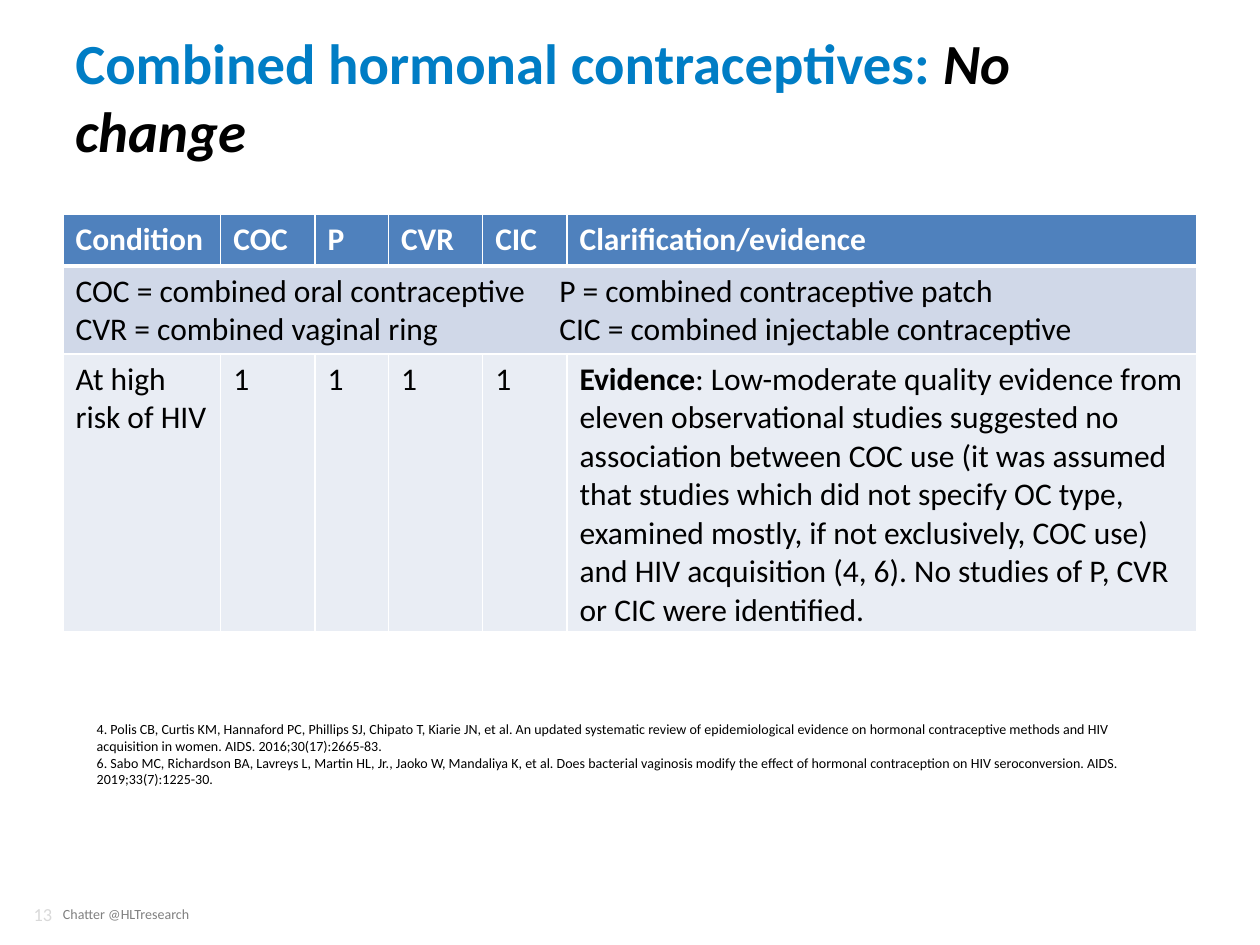
from lxml.etree import SubElement as Sub
from pptx import Presentation
from pptx.dml.color import RGBColor
from pptx.enum.text import MSO_ANCHOR as Anchor, PP_ALIGN as Align
from pptx.oxml.ns import qn
from pptx.util import Cm, Pt

BLACK, WHITE, BLUE = "000000", "FFFFFF", "007DC5"
HEAD, BAND, PALE = "4F81BD", "D0D8E8", "E9EDF4"

HEADS = ["Condition", "COC", "P", "CVR", "CIC", "Clarification/evidence"]
KEYS = [
    "COC = combined oral contraceptive\tP = combined contraceptive patch",
    "CVR = combined vaginal ring\tCIC = combined injectable contraceptive",
]
EVIDENCE = (
    ": Low-moderate quality evidence from eleven observational studies "
    "suggested no association between COC use (it was assumed that studies "
    "which did not specify OC type, examined mostly, if not exclusively, COC "
    "use) and HIV acquisition (4, 6). No studies of P, CVR or CIC were identified."
)
REFS = [
    "4. Polis CB, Curtis KM, Hannaford PC, Phillips SJ, Chipato T, Kiarie JN, "
    "et al. An updated systematic review of epidemiological evidence on "
    "hormonal contraceptive methods and HIV acquisition in women. AIDS. "
    "2016;30(17):2665-83.",
    "6. Sabo MC, Richardson BA, Lavreys L, Martin HL, Jr., Jaoko W, Mandaliya K, "
    "et al. Does bacterial vaginosis modify the effect of hormonal contraception "
    "on HIV seroconversion. AIDS. 2019;33(7):1225-30.",
]


def color(code):
    return RGBColor.from_string(code)


def add_run(para, text, size, code=BLACK, bold=False, italic=False):
    run = para.add_run()
    run.text = text
    font = run.font
    font.name, font.size = "Calibri", Pt(size)
    font.bold, font.italic = bold, italic
    font.color.rgb = color(code)


def paras(frame, count):
    """Return the frame's first paragraph and as many new ones as needed."""
    return [frame.paragraphs[0]] + [frame.add_paragraph() for _ in range(count - 1)]


def add_box(slide, left, top, width, height, anchor=Anchor.TOP):
    box = slide.shapes.add_textbox(Cm(left), Cm(top), Cm(width), Cm(height))
    frame = box.text_frame
    frame.word_wrap = True
    frame.vertical_anchor = anchor
    return frame


def add_title(slide, left, top, width, height):
    para = add_box(slide, left, top, width, height, Anchor.MIDDLE).paragraphs[0]
    add_run(para, "Combined hormonal contraceptives: ", 32.4, BLUE, bold=True)
    add_run(para, "No change", 32.4, bold=True, italic=True)


def style_cell(cell, fill, base=1):
    """Give the cell white borders, with its own bottom width, and a fill."""
    props = cell._tc.get_or_add_tcPr()
    for side in "LRTB":
        width = base if side == "B" else 1
        line = Sub(props, qn(f"a:ln{side}"), w=str(Pt(width)))
        Sub(Sub(line, qn("a:solidFill")), qn("a:srgbClr"), val=WHITE)
    cell.fill.solid()
    cell.fill.fore_color.rgb = color(fill)


def add_tab(para, pos):
    tabs = Sub(para._p.get_or_add_pPr(), qn("a:tabLst"))
    Sub(tabs, qn("a:tab"), pos=str(Cm(pos)), algn="l")


def add_grid(slide, left, top, width, height):
    cols = [3.18, 1.9, 1.48, 1.9, 1.7]
    rows = [1.04, 1.78]
    cols.append(width - sum(cols))
    rows.append(height - sum(rows))
    grid = slide.shapes.add_table(
        len(rows), len(cols), Cm(left), Cm(top), Cm(width), Cm(height)).table
    for col, size in zip(grid.columns, cols):
        col.width = Cm(size)
    for row, size, fill, base in zip(grid.rows, rows, [HEAD, BAND, PALE], [3, 1, 1]):
        row.height = Cm(size)
        for cell in row.cells:
            style_cell(cell, fill, base)

    for num, text in enumerate(HEADS):
        add_run(grid.cell(0, num).text_frame.paragraphs[0], text, 18, WHITE, bold=True)

    keys = grid.cell(1, 0)
    keys.merge(grid.cell(1, len(cols) - 1))
    for para, text in zip(paras(keys.text_frame, len(KEYS)), KEYS):
        add_tab(para, 9.75)
        add_run(para, text, 18)

    for num, text in enumerate(["At high risk of HIV"] + ["1"] * 4):
        add_run(grid.cell(2, num).text_frame.paragraphs[0], text, 18)
    para = grid.cell(2, len(cols) - 1).text_frame.paragraphs[0]
    add_run(para, "Evidence", 18, bold=True)
    add_run(para, EVIDENCE, 18)


def add_refs(slide, left, top, width, height):
    frame = add_box(slide, left, top, width, height)
    for para, text in zip(paras(frame, len(REFS)), REFS):
        add_run(para, text, 8)


def add_footer(slide, left, top, width, height):
    """Place the page number and, to its right, the social handle."""
    page = 1
    para = add_box(slide, left, top, page, height, Anchor.MIDDLE).paragraphs[0]
    para.alignment = Align.RIGHT
    add_run(para, "13", 10.5, "D9D9D9")
    edge = 0.72
    frame = add_box(slide, left + edge, top, width - edge, height)
    add_run(frame.paragraphs[0], "Chatter @HLTresearch", 8, "808080")


def main():
    deck = Presentation()
    deck.slide_width, deck.slide_height = Cm(25.4), Cm(19.05)
    slide = deck.slides.add_slide(deck.slide_layouts[6])
    add_footer(slide, 0.3, 18.12, 4.12, 0.6)
    add_title(slide, 1.27, 0.76, 22.86, 2.36)
    add_grid(slide, 1.27, 4.32, 22.86, 8.4)
    add_refs(slide, 1.7, 14.4, 22.02, 1.63)
    deck.save("out.pptx")


if __name__ == "__main__":
    main()
